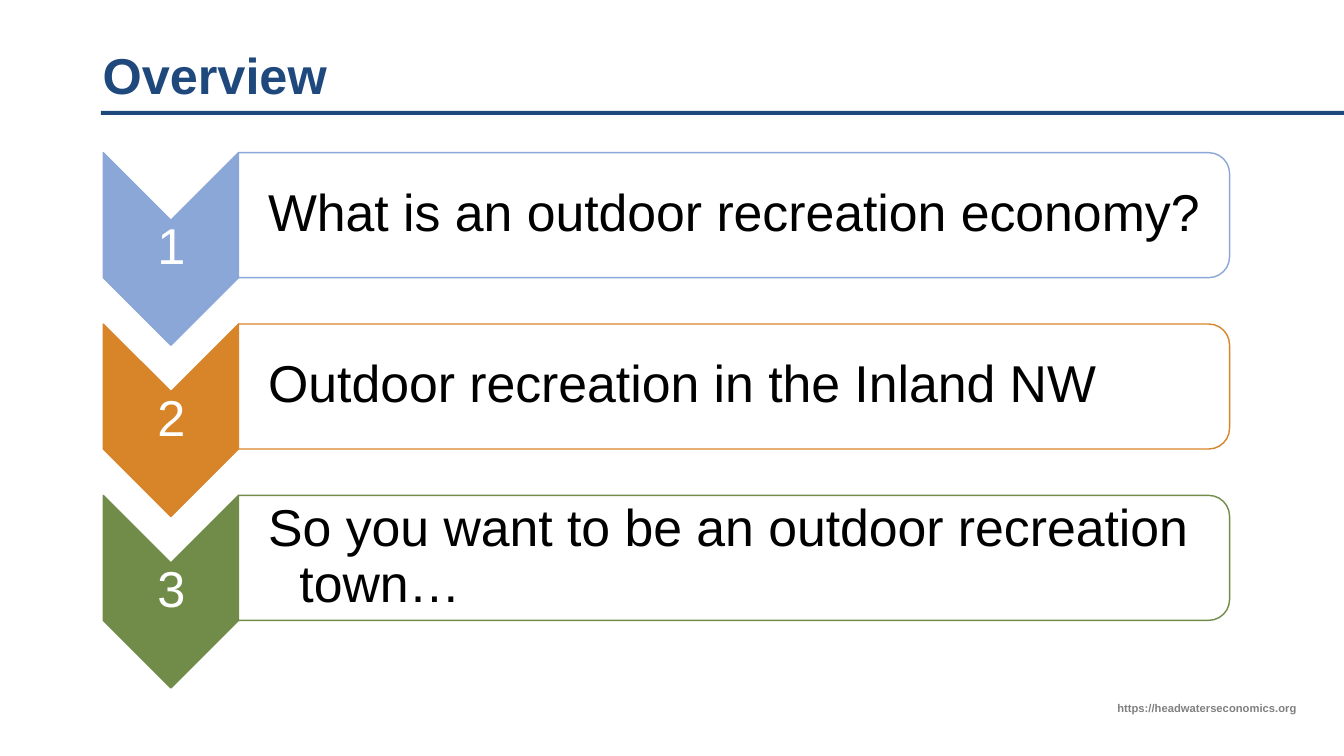
from dataclasses import dataclass
from pptx import Presentation
from pptx.dml.color import RGBColor as RGB
from pptx.enum.shapes import MSO_SHAPE as Kind
from pptx.enum.text import MSO_ANCHOR as Anchor, PP_ALIGN as Align
from pptx.util import Inches, Pt


@dataclass(frozen=True)
class Theme:
    font: str = "Arial"
    navy: str = "1F497D"
    gray: str = "808080"
    white: str = "FFFFFF"
    black: str = "000000"
    steps: tuple = ("8BA7D7", "D8852A", "718C49")
    head: int = 36
    body: int = 37
    foot: int = 8


THEME = Theme()
TOPICS = (
    "What is an outdoor recreation economy?",
    "Outdoor recreation in the Inland NW",
    "So you want to be an outdoor recreation town…",
)
PITCH = 1.7
INSET = 0.03


def add_text(slide, box, text, size, color, bold=False, align=Align.LEFT,
             anchor=Anchor.TOP, pads=(0.1, 0.05, 0.1, 0.05), space=None, hang=0):
    """Add a one-paragraph text box; pads run left, top, right, bottom."""
    frame = slide.shapes.add_textbox(*map(Inches, box)).text_frame
    frame.word_wrap = True
    frame.vertical_anchor = anchor
    (frame.margin_left, frame.margin_top,
     frame.margin_right, frame.margin_bottom) = map(Inches, pads)
    para = frame.paragraphs[0]
    para.text = text
    para.alignment = align
    para.line_spacing = space
    if hang:
        props = para._p.get_or_add_pPr()
        props.set("marL", str(Inches(hang)))
        props.set("indent", str(-Inches(hang)))
    font = para.font
    font.name, font.size, font.bold = THEME.font, Pt(size), bold
    font.color.rgb = RGB.from_string(color)


def add_form(slide, kind, box, fill, line=None, turn=0):
    form = slide.shapes.add_shape(kind, *map(Inches, box))
    form.shadow.inherit = False
    form.rotation = turn
    form.fill.solid()
    form.fill.fore_color.rgb = RGB.from_string(fill)
    if line:
        form.line.color.rgb = RGB.from_string(line)
        form.line.width = Pt(1)
    else:
        form.line.fill.background()


def add_step(slide, index, topic, color):
    """Add a numbered chevron and the topic bar beside it."""
    drop = index * PITCH
    add_form(slide, Kind.CHEVRON, (0.74, 1.8 + drop, 1.91, 1.34), color, color, 90)
    add_text(slide, (1.03, 2.18 + drop, 1.34, 0.57), str(index + 1),
             THEME.head, THEME.white, align=Align.CENTER, anchor=Anchor.MIDDLE,
             pads=(INSET,) * 4, space=0.9)
    add_form(slide, Kind.ROUND_2_SAME_RECTANGLE, (6.66, -2.78 + drop, 1.24, 9.83),
             THEME.white, color, 90)
    add_text(slide, (2.37, 1.57 + drop, 9.77, 1.12), topic,
             THEME.body, THEME.black, anchor=Anchor.MIDDLE,
             pads=(0.29, INSET, INSET, INSET), space=0.9, hang=0.31)


def main():
    deck = Presentation()
    deck.slide_width, deck.slide_height = Inches(13.33), Inches(7.5)
    slide = deck.slides.add_slide(deck.slide_layouts[6])
    add_form(slide, Kind.RECTANGLE, (1, 1.1, 12.33, 0.04), THEME.navy)
    add_text(slide, (8.72, 6.91, 4.24, 0.24), "https://headwaterseconomics.org",
             THEME.foot, THEME.gray, bold=True, align=Align.RIGHT)
    add_text(slide, (0.92, 0.4, 11.5, 0.7), "Overview", THEME.head, THEME.navy,
             bold=True, anchor=Anchor.BOTTOM, space=0.9)
    for index, (topic, color) in enumerate(zip(TOPICS, THEME.steps)):
        add_step(slide, index, topic, color)
    deck.save("out.pptx")


if __name__ == "__main__":
    main()
